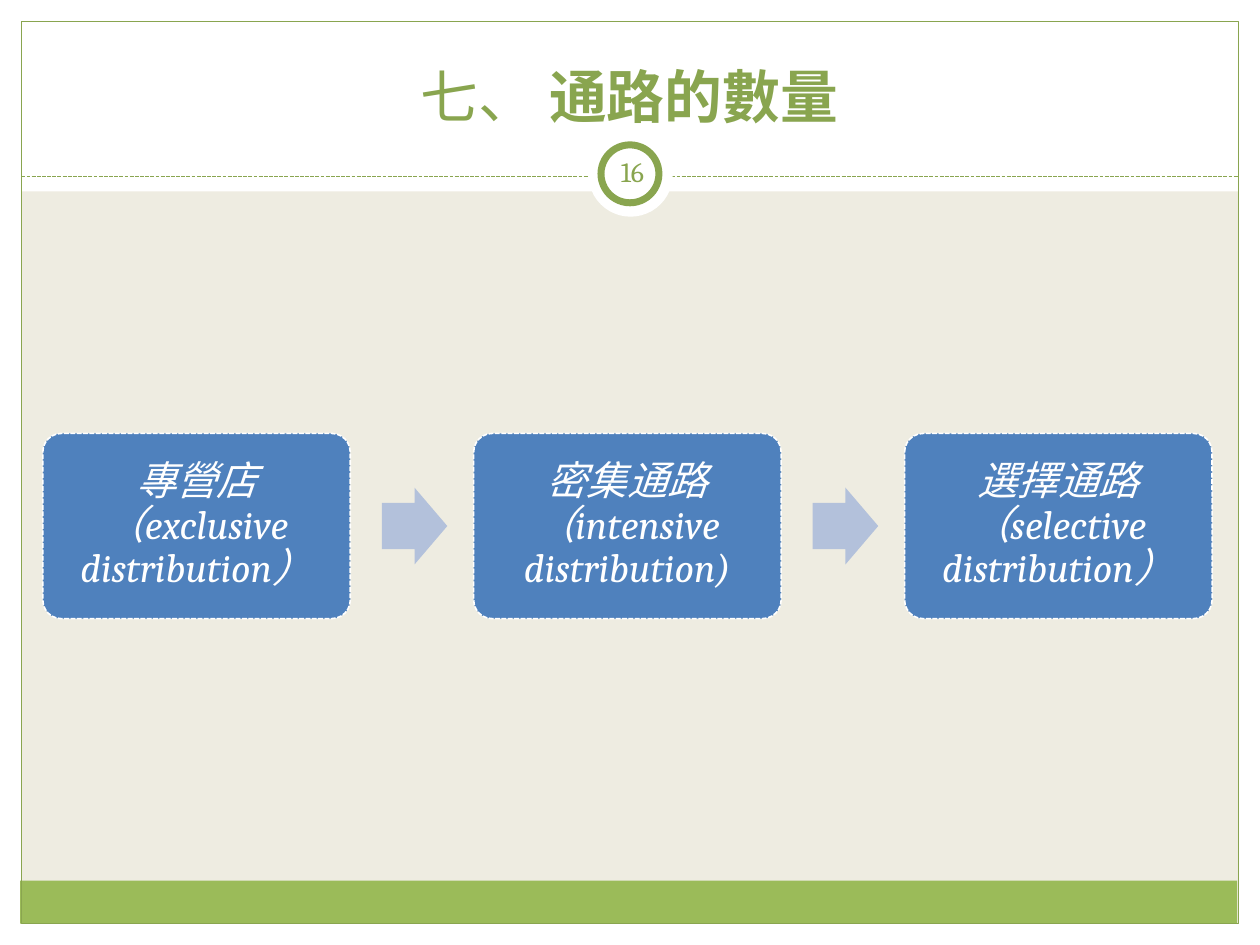
from lxml import etree
from pptx import Presentation
from pptx.dml.color import RGBColor
from pptx.enum.dml import MSO_LINE
from pptx.enum.shapes import MSO_CONNECTOR, MSO_SHAPE
from pptx.enum.text import MSO_ANCHOR, PP_ALIGN
from pptx.oxml.ns import qn
from pptx.util import Inches, Pt

RECT, OVAL = MSO_SHAPE.RECTANGLE, MSO_SHAPE.OVAL
ROUND, ARROW = MSO_SHAPE.ROUNDED_RECTANGLE, MSO_SHAPE.RIGHT_ARROW
DASH = MSO_LINE.SQUARE_DOT
STRAIGHT = MSO_CONNECTOR.STRAIGHT
CENTER = PP_ALIGN.CENTER
MIDDLE, BOTTOM = MSO_ANCHOR.MIDDLE, MSO_ANCHOR.BOTTOM

FONT = "Cambria"
WHITE, SAND = "FFFFFF", "EEECE1"
GREEN, DARK_GREEN = "9BBB59", "89A54F"
BLUE, PALE_BLUE = "4F81BD", "B3C1DB"

CHANNELS = [
    "專營店（exclusive distribution）",
    "密集通路（intensive distribution)",
    "選擇通路（selective distribution）",
]


def rgb(color):
    return RGBColor.from_string(color)


def set_line(line, color, width, dash=None):
    line.color.rgb = rgb(color)
    line.width = Pt(width)
    if dash is not None:
        line.dash_style = dash


def add_shape(s, kind, box, fill=None, line=None, adj=()):
    sp = s.shapes.add_shape(kind, *map(Inches, box))
    sp.shadow.inherit = False
    if fill:
        sp.fill.solid()
        sp.fill.fore_color.rgb = rgb(fill)
    else:
        sp.fill.background()
    if line:
        set_line(sp.line, *line)
    else:
        sp.line.fill.background()
    for i, value in enumerate(adj):
        sp.adjustments[i] = value
    return sp


def add_rule(s, x1, x2, y):
    line = s.shapes.add_connector(STRAIGHT, *map(Inches, (x1, y, x2, y)))
    set_line(line.line, DARK_GREEN, 0.75, DASH)
    etree.SubElement(line._element.spPr, qn("a:effectLst"))


def write(sp, runs, size, color, anchor=MIDDLE, inset=0.05):
    """Fill a shape with one centred paragraph of (text, bold, italic) runs."""
    tf = sp.text_frame
    tf.word_wrap = True
    tf.vertical_anchor = anchor
    tf.margin_left = tf.margin_right = Inches(inset)
    tf.margin_top = tf.margin_bottom = Inches(min(inset, 0.1))
    p = tf.paragraphs[0]
    p.alignment = CENTER
    for text, bold, italic in runs:
        r = p.add_run()
        r.text = text
        r.font.name = FONT
        r.font.size = Pt(size)
        r.font.bold = bold
        r.font.italic = italic
        r.font.color.rgb = rgb(color)
    return p


def add_text(s, box, runs, size, color, **layout):
    sp = s.shapes.add_textbox(*map(Inches, box))
    return write(sp, runs, size, color, **layout)


def add_frame(s):
    # White margins and header, green footer, thin border
    for box in [(0, 7.33, 10, 0.17), (0, 0, 10, 1.52),
                (0, 0, 0.17, 7.5), (9.83, 0, 0.17, 7.5)]:
        add_shape(s, RECT, box, WHITE)
    add_shape(s, RECT, (0.16, 6.99, 9.66, 0.34), GREEN)
    add_shape(s, RECT, (0.17, 0.17, 9.66, 7.16), line=(DARK_GREEN, 0.75))
    # Dashed rule with the page number badge
    add_rule(s, 0.17, 9.83, 1.4)
    add_shape(s, OVAL, (4.67, 1.05, 0.67, 0.67), WHITE)
    add_shape(s, OVAL, (4.77, 1.15, 0.46, 0.46), WHITE, (DARK_GREEN, 4))


def add_process(s, left=0.34, pitch=3.42):
    for i, label in enumerate(CHANNELS):
        x = left + i * pitch
        if i:
            add_shape(s, ARROW, (x - 0.73, 3.87, 0.52, 0.61), PALE_BLUE,
                      adj=(0.6, 0.5))
        card = add_shape(s, ROUND, (x, 3.44, 2.44, 1.47), BLUE,
                         (WHITE, 0.9, DASH), adj=(0.1,))
        p = write(card, [(label, False, True)], 23, WHITE, inset=0.1)
        p.line_spacing = 0.9
        p.space_after = Pt(8)


def main():
    prs = Presentation()
    prs.slide_width, prs.slide_height = Inches(10), Inches(7.5)
    s = prs.slides.add_slide(prs.slide_layouts[6])
    s.background.fill.solid()
    s.background.fill.fore_color.rgb = rgb(SAND)

    add_frame(s)
    # Title and page number
    add_text(s, (0.33, 0.25, 9.33, 0.83),
             [("七、", False, False), (" 通路的數量", True, False)],
             33, DARK_GREEN, anchor=BOTTOM)
    add_text(s, (4.77, 1.12, 0.5, 0.48), [("16", False, False)],
             16, DARK_GREEN)
    add_process(s)
    prs.save("out.pptx")


if __name__ == "__main__":
    main()
